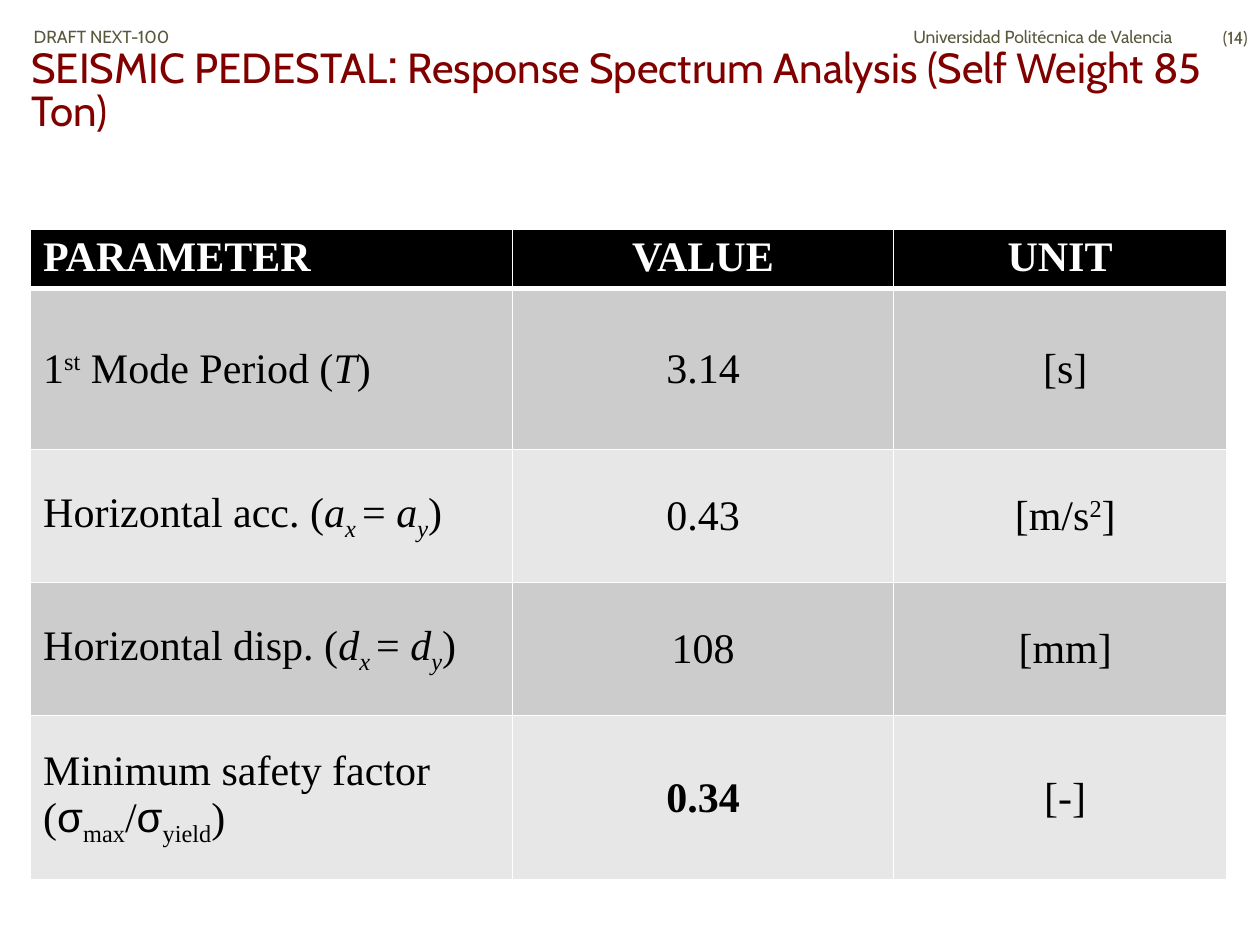
from dataclasses import dataclass
from typing import Optional

from lxml import etree
from pptx import Presentation
from pptx.dml.color import RGBColor
from pptx.enum.text import MSO_ANCHOR, PP_ALIGN
from pptx.oxml.ns import qn
from pptx.util import Pt

LEFT, CENTER, RIGHT = PP_ALIGN.LEFT, PP_ALIGN.CENTER, PP_ALIGN.RIGHT
TOP, MIDDLE, BOTTOM = MSO_ANCHOR.TOP, MSO_ANCHOR.MIDDLE, MSO_ANCHOR.BOTTOM

WHITE = RGBColor(0xFF, 0xFF, 0xFF)
BLACK = RGBColor(0x00, 0x00, 0x00)
OLIVE = RGBColor(0x5A, 0x58, 0x3C)
MAROON = RGBColor(0x80, 0x00, 0x00)
DARK_BAND = RGBColor(0xCC, 0xCC, 0xCC)
LIGHT_BAND = RGBColor(0xE7, 0xE7, 0xE7)

HEADING_FONT, TABLE_FONT, SYMBOL_FONT = "Cabin", "Times New Roman", "Arial"
SUPERSCRIPT, SUBSCRIPT = 30, -25


@dataclass(frozen=True)
class Run:
    text: str
    size: float = 24
    font: str = TABLE_FONT
    bold: bool = False
    italic: bool = False
    baseline: int = 0


@dataclass(frozen=True)
class Label:
    runs: tuple[Run, ...]
    left: float
    top: float
    width: float
    height: float
    color: RGBColor = OLIVE
    alignment: PP_ALIGN = LEFT
    anchor: MSO_ANCHOR = BOTTOM
    line_spacing: Optional[float] = None
    margins: tuple[float, float, float, float] = (7.2, 3.6, 7.2, 3.6)


def heading(text: str, size: float = 10) -> Run:
    return Run(text, size, HEADING_FONT)


def subscript(text: str, italic: bool = False) -> Run:
    return Run(text, italic=italic, baseline=SUBSCRIPT)


def equal_components(name: str, symbol: str) -> tuple[Run, ...]:
    return (
        Run(f"{name} ("),
        Run(symbol, italic=True),
        subscript("x ", italic=True),
        Run("= "),
        Run(symbol, italic=True),
        subscript("y", italic=True),
        Run(")"),
    )


SIGMA = Run("σ", font=SYMBOL_FONT)

LABELS = (
    Label((heading("DRAFT NEXT-100"),), 12.2, 0, 354.2, 30.2, line_spacing=0.8),
    Label((heading("(14)"),), 677.5, 0, 42.5, 31.7, alignment=RIGHT,
          anchor=TOP, margins=(7.2, 15.7, 7.2, 3.6)),
    Label((heading("Universidad Politécnica de Valencia"),),
          484.6, 0, 192.2, 30.2, alignment=RIGHT),
    Label((heading("SEISMIC PEDESTAL", 24), heading(":", 32),
           heading(" Response Spectrum Analysis (Self Weight 85 Ton)", 24)),
          18, 33.8, 686.9, 32.4, MAROON, anchor=MIDDLE,
          line_spacing=0.8, margins=(0, 0, 0, 0)),
)

TABLE_LEFT, TABLE_TOP = 17.5, 131.2
COLUMN_WIDTHS = (275.5, 217.5, 190.5)
ROW_HEIGHTS = (33.2, 92, 76, 76, 94)
CELL_MARGIN = 2.5
THIN_BORDER, HEADER_BORDER = 1, 3

TABLE_ROWS = (
    tuple((Run(name, bold=True),) for name in ("PARAMETER", "VALUE", "UNIT")),
    ((Run("1"), Run("st", baseline=SUPERSCRIPT), Run(" Mode Period ("),
      Run("T", italic=True), Run(")")),
     (Run("3.14"),),
     (Run(" [s]"),)),
    (equal_components("Horizontal acc.", "a"),
     (Run("0.43"),),
     (Run(" [m/s"), Run("2", baseline=SUPERSCRIPT), Run("]"))),
    (equal_components("Horizontal disp.", "d"),
     (Run("108"),),
     (Run(" [mm]"),)),
    ((Run("Minimum safety factor ("), SIGMA, subscript("max"),
      Run("/"), SIGMA, subscript("yield"), Run(")")),
     (Run("0.34", bold=True),),
     (Run(" [-]"),)),
)


def write_runs(paragraph, runs: tuple[Run, ...], color: RGBColor) -> None:
    for item in runs:
        run = paragraph.add_run()
        run.text = item.text
        run.font.size = Pt(item.size)
        run.font.name = item.font
        run.font.bold = item.bold
        run.font.italic = item.italic
        run.font.color.rgb = color
        if item.baseline:
            properties = run._r.get_or_add_rPr()
            properties.set("baseline", str(item.baseline * 1000))


def add_label(slide, label: Label) -> None:
    shape = slide.shapes.add_textbox(
        Pt(label.left), Pt(label.top), Pt(label.width), Pt(label.height))
    frame = shape.text_frame
    frame.word_wrap = True
    frame.vertical_anchor = label.anchor
    (frame.margin_left, frame.margin_top,
     frame.margin_right, frame.margin_bottom) = map(Pt, label.margins)
    paragraph = frame.paragraphs[0]
    paragraph.alignment = label.alignment
    if label.line_spacing:
        paragraph.line_spacing = label.line_spacing
    write_runs(paragraph, label.runs, label.color)


def add_border(cell, side: str, width: float) -> None:
    properties = cell._tc.get_or_add_tcPr()
    line = etree.SubElement(properties, qn(f"a:ln{side}"), w=str(Pt(width)))
    fill = etree.SubElement(line, qn("a:solidFill"))
    etree.SubElement(fill, qn("a:srgbClr"), val=str(WHITE))


def fill_cell(cell, runs: tuple[Run, ...], row: int, column: int) -> None:
    is_header = row == 0
    for side in "LRTB":
        at_header_edge = (row, side) in ((0, "B"), (1, "T"))
        add_border(cell, side, HEADER_BORDER if at_header_edge else THIN_BORDER)
    cell.fill.solid()
    band = DARK_BAND if row % 2 else LIGHT_BAND
    cell.fill.fore_color.rgb = BLACK if is_header else band
    cell.vertical_anchor = TOP if is_header else MIDDLE
    cell.margin_top = cell.margin_bottom = Pt(CELL_MARGIN)
    paragraph = cell.text_frame.paragraphs[0]
    paragraph.alignment = LEFT if column == 0 else CENTER
    write_runs(paragraph, runs, WHITE if is_header else BLACK)


def add_parameter_table(slide) -> None:
    table = slide.shapes.add_table(
        len(ROW_HEIGHTS), len(COLUMN_WIDTHS), Pt(TABLE_LEFT), Pt(TABLE_TOP),
        Pt(sum(COLUMN_WIDTHS)), Pt(sum(ROW_HEIGHTS))).table
    for column, width in zip(table.columns, COLUMN_WIDTHS):
        column.width = Pt(width)
    for row, height in zip(table.rows, ROW_HEIGHTS):
        row.height = Pt(height)
    for row_index, row_runs in enumerate(TABLE_ROWS):
        for column_index, runs in enumerate(row_runs):
            fill_cell(table.cell(row_index, column_index), runs,
                      row_index, column_index)


def main() -> None:
    presentation = Presentation()
    presentation.slide_width, presentation.slide_height = Pt(720), Pt(540)
    slide = presentation.slides.add_slide(presentation.slide_layouts[6])
    for label in LABELS:
        add_label(slide, label)
    add_parameter_table(slide)
    presentation.save("out.pptx")


if __name__ == "__main__":
    main()
